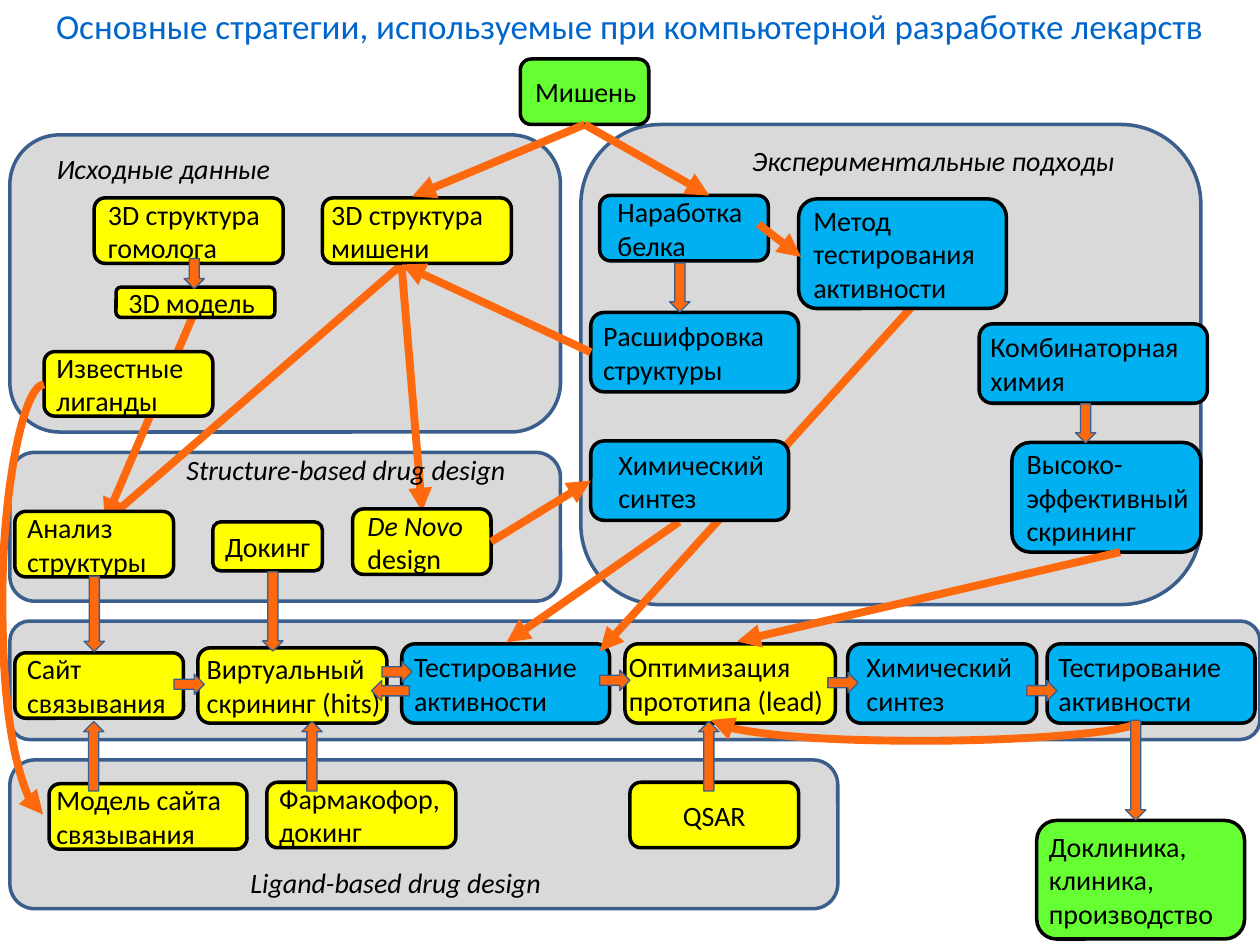
from lxml import etree
from pptx import Presentation
from pptx import util as u
from pptx.dml.color import RGBColor
from pptx.enum import shapes, text
from pptx.oxml.ns import qn

BLACK = RGBColor(0x00, 0x00, 0x00)
GREY = RGBColor(0xD9, 0xD9, 0xD9)
NAVY = RGBColor(0x3A, 0x5F, 0x8C)
YELLOW = RGBColor(0xFF, 0xFF, 0x00)
BLUE = RGBColor(0x00, 0xB0, 0xF0)
GREEN = RGBColor(0x66, 0xFF, 0x33)
ORANGE = RGBColor(0xFF, 0x69, 0x0D)
TITLE_BLUE = RGBColor(0x00, 0x66, 0xCC)
FONT = "Calibri"
TOP, LEFT, BOTTOM, RIGHT = range(4)

EXPERIMENT = (11.71, 2.51, 12.5, 9.68)
STRUCTURE = (0.2, 9.12, 11.1, 3)
DATA = (0.2, 2.72, 11.1, 5.99)
PIPELINE = (0.2, 12.52, 25.2, 2.39)
LIGAND = (0.2, 15.32, 16.69, 3)


def add_block(slide, kind, box, fill, line, width):
    """Add a filled, outlined preset shape."""
    shape = slide.shapes.add_shape(kind, *map(u.Cm, box))
    shape.shadow.inherit = False
    shape.fill.solid()
    shape.fill.fore_color.rgb = fill
    shape.line.color.rgb = line
    shape.line.width = u.Pt(width)
    return shape


def write(frame, words, size=16, color=BLACK, align=text.PP_ALIGN.LEFT, italic=False):
    """Write the words, one paragraph per line, in one style."""
    frame.text = words
    frame.vertical_anchor = text.MSO_ANCHOR.MIDDLE
    frame.word_wrap = True
    for paragraph in frame.paragraphs:
        paragraph.alignment = align
        paragraph.font.name = FONT
        paragraph.font.size = u.Pt(size)
        paragraph.font.color.rgb = color
        paragraph.font.italic = italic


def add_panel(slide, box):
    """Add the grey background of a region."""
    add_block(slide, shapes.MSO_SHAPE.ROUNDED_RECTANGLE, box, GREY, NAVY, 2)


def add_node(slide, box, words, left, top, width, height, fill, inset=0.25,
             align=text.PP_ALIGN.LEFT):
    """Add a labelled step at an offset from the corner of its region."""
    place = (box[0] + left, box[1] + top, width, height)
    node = add_block(slide, shapes.MSO_SHAPE.ROUNDED_RECTANGLE, place, fill, BLACK, 2)
    frame = node.text_frame
    frame.margin_top = frame.margin_bottom = frame.margin_right = 0
    frame.margin_left = u.Cm(max(0, inset - 0.05 * height))
    write(frame, words, align=align)
    return node


def add_caption(slide, box, words, left, top, width):
    """Add the italic name of a region."""
    caption = slide.shapes.add_textbox(u.Cm(box[0] + left), u.Cm(box[1] + top),
                                       u.Cm(width), u.Cm(0.94))
    write(caption.text_frame, words, italic=True)


def add_arrow(slide, begin, end, kind=shapes.MSO_CONNECTOR.STRAIGHT):
    """Add an arrow; each end is a point or a pair of node and side."""
    points = [(0, 0) if hasattr(p[0], "text_frame") else p for p in (begin, end)]
    arrow = slide.shapes.add_connector(kind, *(u.Cm(v) for point in points for v in point))
    for join, target in ((arrow.begin_connect, begin), (arrow.end_connect, end)):
        if hasattr(target[0], "text_frame"):
            join(*target)
    arrow.line.color.rgb = ORANGE
    arrow.line.width = u.Pt(4.5)
    etree.SubElement(arrow.line._get_or_add_ln(), qn("a:tailEnd"), type="triangle")
    etree.SubElement(arrow._element.spPr, qn("a:effectLst"))
    return arrow


def add_curve(slide, begin, end, bend, rotation=0):
    """Add a curved arrow whose bend is a multiple of its width."""
    curve = add_arrow(slide, begin, end, shapes.MSO_CONNECTOR.CURVE)
    properties = curve._element.spPr
    properties.find(qn("a:xfrm")).set("rot", str(rotation * 60000))
    guides = properties.find(qn("a:prstGeom")).find(qn("a:avLst"))
    etree.SubElement(guides, qn("a:gd"), name="adj1", fmla=f"val {round(bend * 100000)}")


def draw_title(slide, box):
    """Draw the slide heading."""
    title = slide.shapes.add_textbox(*map(u.Cm, box))
    title.text_frame.margin_top = title.text_frame.margin_bottom = 0
    write(title.text_frame,
          "Основные стратегии, используемые при компьютерной разработке лекарств",
          20, TITLE_BLUE, text.PP_ALIGN.CENTER)


def draw_pipeline(slide, box):
    """Draw the row of steps from binding site to activity testing."""
    add_node(slide, box, "Сайт\nсвязывания", 0.1, 0.64, 3.4, 1.32, YELLOW)
    add_node(slide, box, "Виртуальный\ncкрининг (hits)", 3.79, 0.54, 3.81, 1.52, YELLOW, 0.18)
    for words, left, width, fill, inset in (
            ("Тестирование\nактивности", 7.9, 4.19, BLUE, 0.25),
            ("Оптимизация\nпрототипа (lead)", 12.4, 4.24, YELLOW, 0.08),
            ("Химический\nсинтез", 16.89, 3.81, BLUE, 0.38),
            ("Тестирование\nактивности", 20.91, 4.19, BLUE, 0.23)):
        add_node(slide, box, words, left, 0.46, width, 1.6, fill, inset)


def draw_ligand(slide, box):
    """Draw the ligand-based design region."""
    add_node(slide, box, "Модель сайта\nсвязывания", 0.79, 0.48, 3.99, 1.32, YELLOW, 0.15)
    add_node(slide, box, "Фармакофор,\nдокинг", 5.18, 0.45, 3.81, 1.32, YELLOW)
    add_node(slide, box, "QSAR", 12.5, 0.45, 3.4, 1.32, YELLOW, 0, text.PP_ALIGN.CENTER)
    add_caption(slide, box, "Ligand-based drug design", 4.6, 2, 7.09)


def draw_data(slide, box):
    """Draw the source data region."""
    add_node(slide, box, "3D структура\nгомолога", 1.7, 1.27, 3.81, 1.32, YELLOW, 0.28)
    add_node(slide, box, "3D модель", 2.14, 3.07, 3.2, 0.61, YELLOW)
    add_node(slide, box, "3D структура\nмишени", 6.3, 1.27, 3.81, 1.32, YELLOW, 0.18)
    add_node(slide, box, "Известные\nлиганды", 0.69, 4.37, 3.4, 1.3, YELLOW)
    add_caption(slide, box, "Исходные данные", 0.69, 0.2, 4.85)


def draw_structure(slide, box):
    """Draw the structure-based design region and return the De Novo step."""
    add_node(slide, box, "Анализ\nструктуры", 0.1, 1.19, 3.2, 1.32, YELLOW)
    add_node(slide, box, "Докинг", 4.09, 1.4, 2.21, 0.99, YELLOW)
    de_novo = add_node(slide, box, "De Novo\ndesign", 6.91, 1.14, 2.79, 1.32, YELLOW, 0.3)
    de_novo.text_frame.paragraphs[0].font.italic = True
    add_caption(slide, box, "Structure-based drug design", 3.31, -0.13, 7.7)
    return de_novo


def draw_experiment(slide, box):
    """Draw the experimental region and return its decoding and synthesis steps."""
    add_node(slide, box, "Наработка\nбелка", 0.38, 1.43, 3.4, 1.32, BLUE, 0.36)
    add_node(slide, box, "Метод\nтестирования\nактивности", 4.39, 1.5, 4.19, 2.21, BLUE, 0.3)
    decoding = add_node(slide, box, "Расшифровка\nструктуры", 0.2, 3.79, 4.19, 1.6, BLUE)
    synthesis = add_node(slide, box, "Химический\nсинтез", 0.2, 6.38, 3.99, 1.6, BLUE, 0.56)
    add_node(slide, box, "Комбинаторная\nхимия", 8.03, 4.02, 4.6, 1.6, BLUE, 0.23)
    add_node(slide, box, "Высоко-\nэффективный\nскрининг", 8.69, 6.41, 3.81, 2.21, BLUE, 0.3)
    add_caption(slide, box, "Экспериментальные подходы", 3.2, 0.26, 7.9)
    return decoding, synthesis


def draw_block_arrows(slide):
    """Draw the short block arrows, grouped by direction."""
    groups = {
        0: ((7.7, 13.34, 0.61), (12.09, 13.51, 0.61), (16.69, 13.56, 0.61),
            (20.7, 13.72, 0.61), (3.51, 13.59, 0.61)),
        90: ((3.61, 5.31, 0.61), (4.7, 12.12, 1.6), (1.14, 12.17, 1.52),
             (13.21, 5.59, 0.99), (21.89, 15.32, 2.01), (21.49, 8.33, 0.79)),
        180: ((7.49, 13.72, 0.76),),
        270: tuple((left, 15.04, 1.4) for left in (1.19, 5.59, 13.59)),
    }
    for rotation, places in groups.items():
        for place in places:
            arrow = add_block(slide, shapes.MSO_SHAPE.RIGHT_ARROW, (*place, 0.41),
                              ORANGE, NAVY, 0)
            arrow.rotation = rotation


def main():
    """Build the slide and save it."""
    presentation = Presentation()
    presentation.slide_width, presentation.slide_height = u.Cm(25.4), u.Cm(19.05)
    slide = presentation.slides.add_slide(presentation.slide_layouts[6])
    for box in (EXPERIMENT, STRUCTURE, DATA, PIPELINE, LIGAND):
        add_panel(slide, box)
    draw_title(slide, (0, 0, 25.4, 1.04))
    draw_pipeline(slide, PIPELINE)
    draw_ligand(slide, LIGAND)
    for begin, end in (((3.91, 6.32), (2.11, 10.52)), ((8.1, 5.33), (2.11, 10.52)),
                       ((8.1, 5.41), (8.51, 10.31)), ((18.44, 6.12), (12.09, 13.13)),
                       ((13.69, 10.52), (10.21, 12.95))):
        add_arrow(slide, begin, end)
    draw_data(slide, DATA)
    de_novo = draw_structure(slide, STRUCTURE)
    decoding, synthesis = draw_experiment(slide, EXPERIMENT)
    target = add_node(slide, (10.49, 1.19), "Мишень", 0, 0, 2.59, 1.32, GREEN, 0.3)
    add_node(slide, (20.9, 16.54), "Доклиника,\nклиника,\nпроизводство",
             0, 0, 4.19, 2.39, GREEN)
    for begin, end in (((decoding, LEFT), (8.1, 5.33)),
                       ((de_novo, RIGHT), (synthesis, LEFT)),
                       ((target, BOTTOM), (8.31, 3.96)), ((target, BOTTOM), (14.3, 3.94)),
                       ((15.29, 4.52), (16.15, 5.18)), ((22.58, 11.13), (14.86, 12.93))):
        add_arrow(slide, begin, end)
    add_curve(slide, (0.89, 7.75), (0.87, 16.42), 42)
    add_curve(slide, (18.6, 18.83), (18.64, 10.24), -9.5, 270)
    draw_block_arrows(slide)
    presentation.save("out.pptx")


if __name__ == "__main__":
    main()
